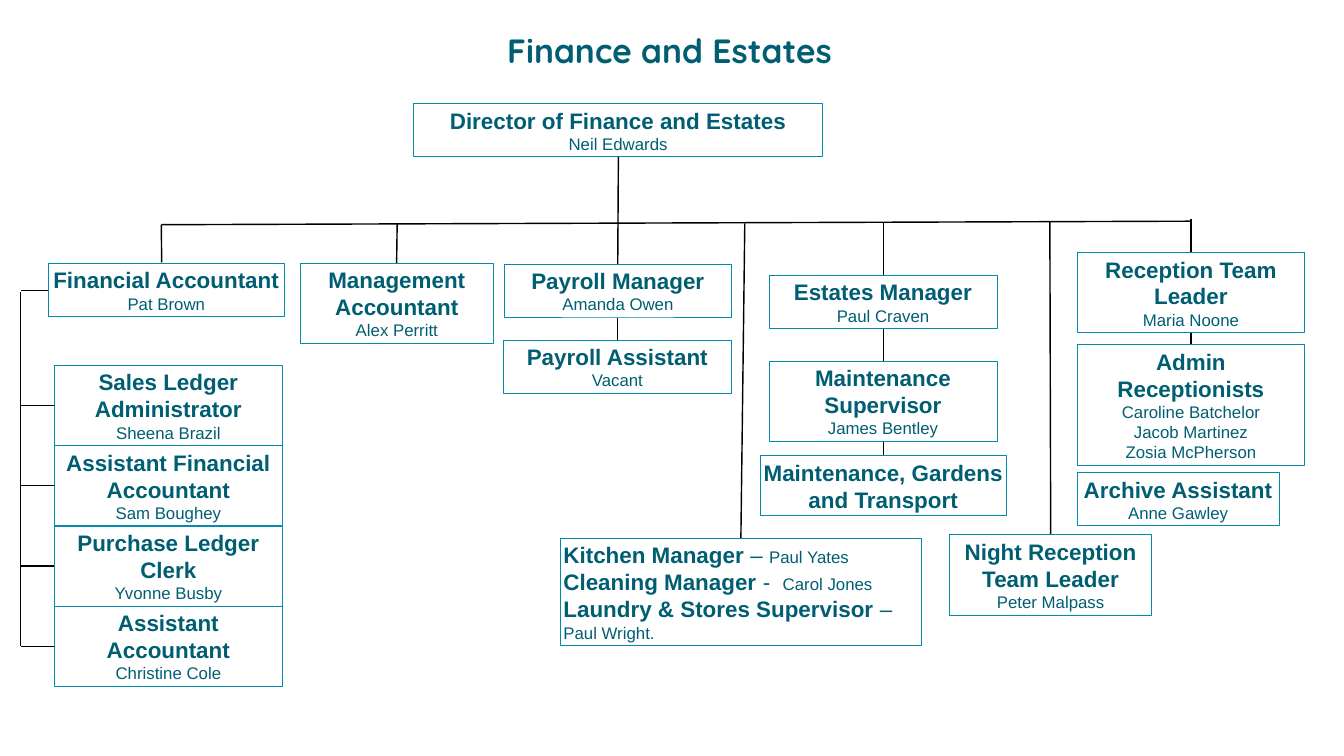
from pptx import Presentation
from pptx.dml.color import RGBColor
from pptx.enum.shapes import MSO_CONNECTOR, MSO_SHAPE
from pptx.enum.text import MSO_ANCHOR, MSO_AUTO_SIZE, PP_ALIGN
from pptx.oxml.ns import qn
from pptx.util import Pt
from lxml import etree

RECT, LINE = MSO_SHAPE.RECTANGLE, MSO_CONNECTOR.STRAIGHT
TOP, MIDDLE = MSO_ANCHOR.TOP, MSO_ANCHOR.MIDDLE
GROW, FIXED = MSO_AUTO_SIZE.SHAPE_TO_FIT_TEXT, MSO_AUTO_SIZE.NONE
LEFT, CENTER = PP_ALIGN.LEFT, PP_ALIGN.CENTER
INK = RGBColor(0x00, 0x5E, 0x72)
EDGE = RGBColor(0x00, 0x8C, 0xAA)
BLACK = RGBColor(0, 0, 0)
ROLE = {"name": "Arial", "size": Pt(32), "bold": True}
DASH = {"name": "Arial", "size": Pt(32), "bold": False}
NAME = {"name": "Arial", "size": Pt(24), "bold": False}
HEAD = {"name": "Quicksand", "size": Pt(48), "bold": True}


def add_run(para, text, style):
    run = para.add_run()
    run.text = text
    for key, value in style.items():
        setattr(run.font, key, value)
    run.font.color.rgb = INK


def add_box(x, y, w, h, lines, align=CENTER):
    box = slide.shapes.add_shape(RECT, Pt(x), Pt(y), Pt(w), Pt(h))
    box.shadow.inherit = False
    box.fill.background()
    box.line.color.rgb = EDGE
    box.line.width = Pt(1)
    frame = box.text_frame
    for key, value in FRAME.items():
        setattr(frame, key, value)
    for i, runs in enumerate(lines):
        para = frame.add_paragraph() if i else frame.paragraphs[0]
        para.alignment = align
        for text, style in runs:
            add_run(para, text, style)


def insets(size):
    return {f"margin_{side}": Pt(size) for side in ("left", "top", "right", "bottom")}


FRAME = {"word_wrap": True, "vertical_anchor": MIDDLE, "auto_size": GROW, **insets(4.3)}

deck = Presentation()
deck.slide_width, deck.slide_height = Pt(1920), Pt(1080)
slide = deck.slides.add_slide(deck.slide_layouts[5])

# Title
title = slide.shapes.title
title.left, title.top, title.width, title.height = Pt(49), Pt(49), Pt(1815), Pt(72)
frame = title.text_frame
for key, value in {"vertical_anchor": TOP, "auto_size": FIXED, **insets(0)}.items():
    setattr(frame, key, value)
para = frame.paragraphs[0]
para.alignment, para.line_spacing = CENTER, 0.9
add_run(para, "Finance and Estates", HEAD)

# Shared sizes: box heights for one and two role lines, and column places
ONE, TWO, WIDE = 75.6, 114.5, 325.4
PAY, WORKS, DESK = 882.5, 1262, 1701.4
SPINE, LEDGER, STEP = 29.5, 77.8, 114.7

# Connecting lines: x and y of both ends
lines = [
    (230.4, 321, DESK, 316),
    (883.4, 224, PAY, 377.3),
    (230.4, 321, 231, 375),
    (567.4, 319.7, 566.6, 376),
    (WORKS, 319, WORKS, 393.8),
    (1064, 319, 1058.4, 769),
    (1499.8, 316, 1501, 764),
    (DESK, 312.5, DESK, 360.7),
    (PAY, 453.6, PAY, 486),
    (WORKS, 469.4, WORKS, 515.5),
    (WORKS, 630.7, WORKS, 650.9),
    (DESK, 475.2, DESK, 492.5),
    (SPINE, 417.6, SPINE, 922.3),
    (69, 414.7, SPINE, 414.7),
]

# Role boxes: place, size, role, names
boxes = [
    (591, 148.3, 584, ONE, "Director of Finance and Estates", "Neil Edwards"),
    (69, 376.5, 337, ONE, "Financial Accountant", "Pat Brown"),
    (429, 376, 275.8, TWO, "Management Accountant", "Alex Perritt"),
    (720, 377.3, WIDE, ONE, "Payroll Manager", "Amanda Owen"),
    (719.3, 486, WIDE, ONE, "Payroll Assistant", "Vacant"),
    (1098.7, 393.8, WIDE, ONE, "Estates Manager", "Paul Craven"),
    (1098.7, 515.5, WIDE, TWO, "Maintenance Supervisor", "James Bentley"),
    (1085.8, 650.9, 352, 85.7, "Maintenance, Gardens and Transport"),
    (1356.5, 764, 288.7, TWO, "Night Reception Team Leader", "Peter Malpass"),
    (1538.6, 360.7, WIDE, TWO, "Reception Team Leader", "Maria Noone"),
    (1538.6, 492.5, WIDE, 172.8, "Admin Receptionists",
     "Caroline Batchelor", "Jacob Martinez", "Zosia McPherson"),
    (1538.6, 675.4, 288.7, ONE, "Archive Assistant", "Anne Gawley"),
]

# Ledger team: equal steps, each joined to the spine
team = [
    ("Sales Ledger Administrator", "Sheena Brazil"),
    ("Assistant Financial Accountant", "Sam Boughey"),
    ("Purchase Ledger Clerk", "Yvonne Busby"),
    ("Assistant Accountant", "Christine Cole"),
]
for i, (role, name) in enumerate(team):
    y = 522 + i * STEP
    boxes.append((LEDGER, y, WIDE, TWO, role, name))
    lines.append((LEDGER, y + TWO / 2, SPINE, y + TWO / 2))

# Draw lines, then boxes
for ends in lines:
    link = slide.shapes.add_connector(LINE, *[Pt(end) for end in ends])
    link.line.color.rgb = BLACK
    link.line.width = Pt(2)
    etree.SubElement(link._element.spPr, qn("a:effectLst"))

for x, y, w, h, role, *names in boxes:
    add_box(x, y, w, h, [[(role, ROLE)]] + [[(name, NAME)] for name in names])

# Services box: role and name on one line
staff = [
    ("Kitchen Manager ", "– ", "Paul Yates"),
    ("Cleaning Manager ", "-  ", "Carol Jones"),
    ("Laundry & Stores Supervisor ", "– ", "Paul Wright."),
]
rows = [list(zip(parts, (ROLE, DASH, NAME))) for parts in staff]
add_box(800.6, 769, 515.5, 153.4, rows, LEFT)

deck.save("out.pptx")
